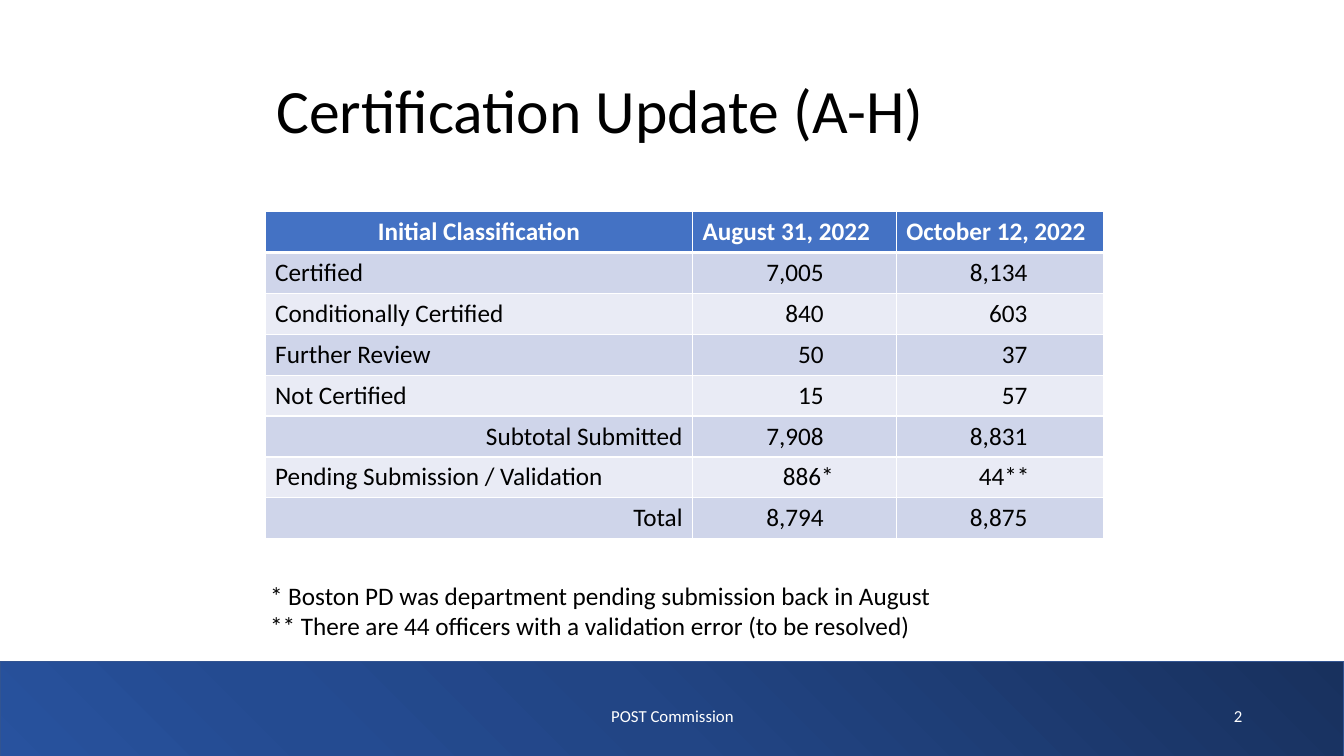
from dataclasses import dataclass

from lxml import etree
from pptx import Presentation
from pptx.dml.color import RGBColor
from pptx.enum.shapes import MSO_SHAPE
from pptx.enum.text import MSO_ANCHOR, PP_ALIGN
from pptx.oxml import parse_xml
from pptx.oxml.ns import qn
from pptx.util import Inches, Pt

LEFT, CENTER, RIGHT = PP_ALIGN.LEFT, PP_ALIGN.CENTER, PP_ALIGN.RIGHT
TOP, MIDDLE = MSO_ANCHOR.TOP, MSO_ANCHOR.MIDDLE
RECTANGLE = MSO_SHAPE.RECTANGLE


@dataclass(frozen=True)
class Theme:
    font: str = "Calibri"
    black: str = "000000"
    white: str = "FFFFFF"
    header: str = "4472C4"
    bands: tuple = ("CFD5EA", "E9EBF5")
    bar_line: str = "325491"
    bar_stops: tuple = ((0, "18315E"), (52, "224585"), (76, "244B91"), (100, "28529E"))
    title: int = 44
    body: int = 18
    footer: int = 12


theme = Theme()


def add_text(p, text, size, color, align=LEFT, bold=False):
    p.alignment = align
    r = p.add_run()
    r.text = text
    r.font.name = theme.font
    r.font.size = Pt(size)
    r.font.bold = bold
    r.font.color.rgb = RGBColor.from_string(color)


def add_border(cell, side, width):
    ln = etree.SubElement(cell._tc.get_or_add_tcPr(), qn(f"a:{side}"), w=str(Pt(width)))
    fill = etree.SubElement(ln, qn("a:solidFill"))
    etree.SubElement(fill, qn("a:srgbClr"), val=theme.white)


prs = Presentation()
prs.slide_width, prs.slide_height = Inches(13.33), Inches(7.5)
slide = prs.slides.add_slide(prs.slide_layouts[5])

# Footer bar
bar = slide.shapes.add_shape(RECTANGLE, 0, Inches(6.56), prs.slide_width, Inches(1.02))
bar.shadow.inherit = False
bar.line.color.rgb = RGBColor.from_string(theme.bar_line)
bar.line.width = Pt(1)
bar.fill.gradient()
bar.fill.gradient_angle = 225
stops = bar._element.spPr.find(qn("a:gradFill")).find(qn("a:gsLst"))
for stop in list(stops):
    stops.remove(stop)
for position, color in theme.bar_stops:
    stop = etree.SubElement(stops, qn("a:gs"), pos=str(position * 1000))
    etree.SubElement(stop, qn("a:srgbClr"), val=color)

# Title
title = slide.shapes.title
title.left, title.top = Inches(2.64), Inches(0.4)
title.width, title.height = Inches(9.77), Inches(1.45)
title.text_frame.vertical_anchor = MIDDLE
p = title.text_frame.paragraphs[0]
p.line_spacing = 0.9
add_text(p, "Certification Update (A-H)", theme.title, theme.black)

# Certification table
rows = [
    ("Initial Classification", "August 31, 2022", "October 12, 2022"),
    ("Certified", "7,005", "8,134"),
    ("Conditionally Certified", "840", "603"),
    ("Further Review", "50", "37"),
    ("Not Certified", "15", "57"),
    ("Subtotal Submitted", "7,908", "8,831"),
    ("Pending Submission / Validation", "886*", "44**"),
    ("Total", "8,794", "8,875"),
]
sums = ("Subtotal Submitted", "Total")
col_widths = (4.24, 2.02, 2.06)
number_insets = (0, 0.72, 0.76)
starred_insets = {"886*": 0.62, "44**": 0.74}
row_height = 0.405

table = slide.shapes.add_table(
    len(rows), len(col_widths), Inches(2.63), Inches(2.1),
    Inches(sum(col_widths)), Inches(row_height * len(rows))).table
for column, width in zip(table.columns, col_widths):
    column.width = Inches(width)

for i, row in enumerate(rows):
    for j, text in enumerate(row):
        cell = table.cell(i, j)
        is_header = i == 0
        for side in ("lnL", "lnR", "lnT", "lnB"):
            under_header = (i, side) in ((0, "lnB"), (1, "lnT"))
            add_border(cell, side, 3 if under_header else 1)
        cell.fill.solid()
        fill = theme.header if is_header else theme.bands[(i - 1) % 2]
        cell.fill.fore_color.rgb = RGBColor.from_string(fill)
        if is_header:
            align = LEFT if j else CENTER
        elif j:
            align = RIGHT
            cell.margin_right = Inches(starred_insets.get(text, number_insets[j]))
        else:
            align = RIGHT if text in sums else LEFT
        color = theme.white if is_header else theme.black
        add_text(cell.text_frame.paragraphs[0], text, theme.body, color, align, is_header)

# Footer, slide number and footnotes
footnotes = [
    "* Boston PD was department pending submission back in August",
    "** There are 44 officers with a validation error (to be resolved)",
]
boxes = [
    ((4.42, 6.9, 4.5, 0.4), ["POST Commission"], theme.footer, theme.white, CENTER, MIDDLE),
    ((9.42, 6.9, 3, 0.4), ["2"], theme.footer, theme.white, RIGHT, MIDDLE),
    ((2.58, 5.71, 7.77, 0.71), footnotes, theme.body, theme.black, LEFT, TOP),
]
for place, lines, size, color, align, anchor in boxes:
    tf = slide.shapes.add_textbox(*map(Inches, place)).text_frame
    tf.word_wrap = True
    tf.vertical_anchor = anchor
    for n, line in enumerate(lines):
        p = tf.add_paragraph() if n else tf.paragraphs[0]
        add_text(p, line, size, color, align)

prs.save("out.pptx")
